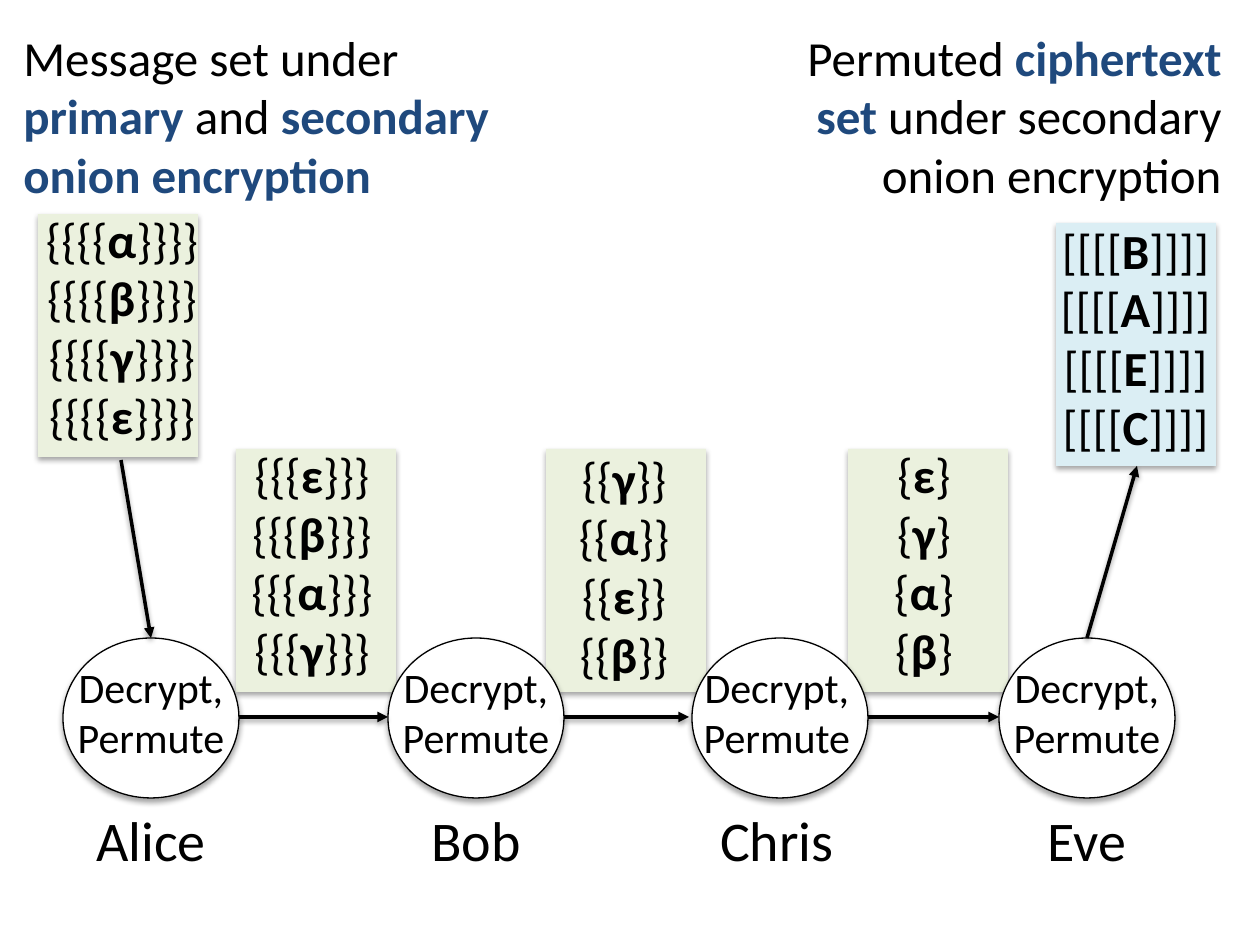
import pptx
import pptx.util
import pptx.dml.color
import pptx.enum.shapes
import pptx.enum.text
import pptx.oxml
import pptx.oxml.ns

PX = 914400 / 126
BLACK, BLUE, GREEN, CYAN, WHITE = "000000", "1F497D", "EBF1DE", "DBEEF4", "FFFFFF"
ALIGN = pptx.enum.text.PP_ALIGN
SHAPE = pptx.enum.shapes.MSO_SHAPE

# Name, circle left, text left
NODES = [("Alice", 63, 63), ("Bob", 388, 388), ("Chris", 692, 689), ("Eve", 999, 999)]
NODE_TOP, NODE_WIDTH, NODE_HEIGHT = 638, 176, 160
TASK = "Decrypt, Permute"

# Letters, brackets, depth, fill, card left and top, text left, top and width
MESSAGE_SETS = [
    ("αβγε", "{}", 4, GREEN, (38, 214), (8, 203, 228)),
    ("εβαγ", "{}", 3, GREEN, (236, 449), (198, 438, 228)),
    ("γαεβ", "{}", 2, GREEN, (546, 449), (510, 442, 228)),
    ("εγαβ", "{}", 1, GREEN, (848, 449), (810, 438, 228)),
    ("BAEC", "[]", 4, CYAN, (1056, 223), (1038, 214, 195)),
]
CARD_WIDTH, CARD_HEIGHT, CARD_TEXT_HEIGHT = 160, 243, 289

# Runs are (text, emphasised)
CAPTIONS = [
    ((11, 21, 566, 190), ALIGN.LEFT,
     [("Message set under ", False), ("primary ", True), ("and ", False),
      ("secondary onion encryption", True)]),
    ((740, 21, 494, 190), ALIGN.RIGHT,
     [("Permuted ", False), ("ciphertext set ", True),
      ("under secondary onion encryption", False)]),
]
DIAGONALS = [(121, 460, 151, 638), (1087, 638, 1137, 466)]


def px(*lengths):
    return [round(length * PX) for length in lengths]


def rgb(color):
    return pptx.dml.color.RGBColor.from_string(color)


def add_shadow(part, opacity, distance):
    """Put a soft shadow straight below a part whose fill and line are set."""
    part._element.spPr.append(pptx.oxml.parse_xml(
        f'<a:effectLst {pptx.oxml.ns.nsdecls("a")}>'
        f'<a:outerShdw blurRad="{pptx.util.Pt(3.1)}" dist="{pptx.util.Pt(distance)}"'
        f' dir="5400000" rotWithShape="0"><a:srgbClr val="{BLACK}">'
        f'<a:alpha val="{opacity * 1000}"/></a:srgbClr></a:outerShdw></a:effectLst>'))


def add_panel(slide, preset, box, fill, outlined=False):
    panel = slide.shapes.add_shape(preset, *px(*box))
    panel.fill.solid()
    panel.fill.fore_color.rgb = rgb(fill)
    if outlined:
        panel.line.color.rgb = rgb(BLACK)
        panel.line.width = pptx.util.Pt(0.75)
    else:
        panel.line.fill.background()
    add_shadow(panel, 35, 1.8)


def add_arrow(slide, ends):
    arrow = slide.shapes.add_connector(
        pptx.enum.shapes.MSO_CONNECTOR.STRAIGHT, *px(*ends))
    arrow.line.color.rgb = rgb(BLACK)
    arrow.line.width = pptx.util.Pt(2)
    arrow.line._get_or_add_ln().append(pptx.oxml.parse_xml(
        f'<a:tailEnd {pptx.oxml.ns.nsdecls("a")} type="triangle"/>'))
    add_shadow(arrow, 38, 1.6)


def add_text(slide, box, lines, size, align=ALIGN.CENTER, accent=BLACK):
    """Write lines of (text, emphasised) runs; emphasis is bold in the accent colour."""
    frame = slide.shapes.add_textbox(*px(*box)).text_frame
    frame.word_wrap = True
    frame.auto_size = pptx.enum.text.MSO_AUTO_SIZE.SHAPE_TO_FIT_TEXT
    for index, runs in enumerate(lines):
        paragraph = frame.add_paragraph() if index else frame.paragraphs[0]
        paragraph.alignment = align
        paragraph.font.name = "Calibri"
        paragraph.font.size = pptx.util.Pt(size)
        for text, emphasised in runs:
            run = paragraph.add_run()
            run.text = text
            run.font.bold = emphasised
            run.font.color.rgb = rgb(accent if emphasised else BLACK)


def main():
    deck = pptx.Presentation()
    deck.slide_width, deck.slide_height = px(1260, 945)
    slide = deck.slides.add_slide(deck.slide_layouts[6])

    for _, _, _, fill, corner, _ in reversed(MESSAGE_SETS):
        add_panel(slide, SHAPE.RECTANGLE, (*corner, CARD_WIDTH, CARD_HEIGHT), fill)
    for _, left, _ in NODES:
        add_panel(slide, SHAPE.OVAL, (left, NODE_TOP, NODE_WIDTH, NODE_HEIGHT),
                  WHITE, outlined=True)

    middle = NODE_TOP + NODE_HEIGHT // 2 - 1
    for (_, left, _), (_, _, next_left) in zip(NODES, NODES[1:]):
        add_arrow(slide, (left + NODE_WIDTH, middle, next_left, middle))
    for ends in DIAGONALS:
        add_arrow(slide, ends)

    for name, _, left in NODES:
        add_text(slide, (left, 799, NODE_WIDTH, 81), [[(name, False)]], 32)
        add_text(slide, (left, 655, NODE_WIDTH, 115), [[(TASK, False)]], 24)
    for letters, (opening, closing), depth, _, _, text_box in MESSAGE_SETS:
        lines = [[(opening * depth, False), (letter, True), (closing * depth, False)]
                 for letter in letters]
        add_text(slide, (*text_box, CARD_TEXT_HEIGHT), lines, 28)
    for box, align, runs in CAPTIONS:
        add_text(slide, box, [runs], 28, align, BLUE)

    deck.save("out.pptx")


if __name__ == "__main__":
    main()
